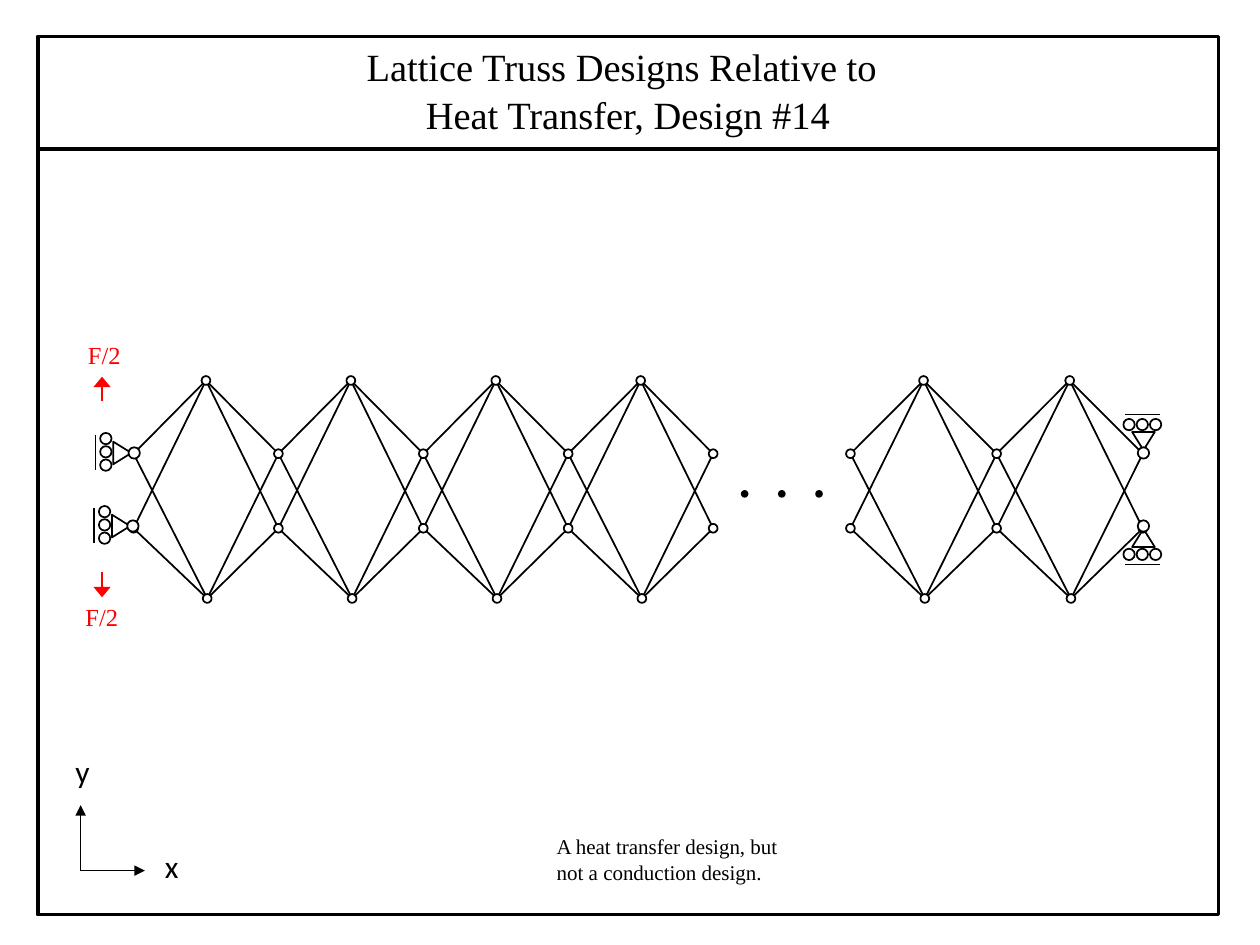
import pptx
import pptx.dml.color
import pptx.enum.shapes
import pptx.enum.text
import pptx.oxml
import pptx.oxml.ns
import pptx.util

WIDTH, HEIGHT = 10, 7.5
BLACK, WHITE, RED = "000000", "FFFFFF", "FF0000"
SERIF, SANS = "Times New Roman", "Calibri"
SHAPE = pptx.enum.shapes.MSO_SHAPE
inch = pptx.util.Inches


def colour(value):
    return pptx.dml.color.RGBColor.from_string(value)


def add_line(slide, start, end, weight=1, ink=BLACK, head=None):
    line = slide.shapes.add_connector(
        pptx.enum.shapes.MSO_CONNECTOR.STRAIGHT, *map(inch, (*start, *end)))
    line.line.color.rgb = colour(ink)
    line.line.width = pptx.util.Pt(weight)
    properties = line._element.spPr
    if head:
        tail = pptx.oxml.parse_xml(
            f'<a:tailEnd {pptx.oxml.ns.nsdecls("a")} type="triangle" w="{head}" len="med"/>')
        line.line._get_or_add_ln().append(tail)
    properties.append(pptx.oxml.parse_xml(f'<a:effectLst {pptx.oxml.ns.nsdecls("a")}/>'))


def add_outline(slide, kind, box, fill=None, weight=1, turn=0):
    outline = slide.shapes.add_shape(kind, *map(inch, box))
    outline.shadow.inherit = False
    outline.rotation = turn
    if fill:
        outline.fill.solid()
        outline.fill.fore_color.rgb = colour(fill)
    else:
        outline.fill.background()
    outline.line.color.rgb = colour(BLACK)
    outline.line.width = pptx.util.Pt(weight)


def add_circle(slide, centre, size, fill=WHITE, weight=1):
    x, y = centre
    add_outline(slide, SHAPE.OVAL, (x - size / 2, y - size / 2, size, size), fill, weight)


def write(paragraph, words, size, font, ink=BLACK):
    run = paragraph.add_run()
    run.text = words
    run.font.size = pptx.util.Pt(size)
    run.font.name = font
    run.font.color.rgb = colour(ink)


def add_label(slide, box, words, size, font=SERIF, ink=BLACK):
    frame = slide.shapes.add_textbox(*map(inch, box)).text_frame
    frame.word_wrap = True
    write(frame.paragraphs[0], words, size, font, ink)


def draw_heading(slide, box, lines):
    heading = slide.shapes.title
    heading.left, heading.top, heading.width, heading.height = map(inch, box)
    frame = heading.text_frame
    frame.auto_size = pptx.enum.text.MSO_AUTO_SIZE.NONE
    frame.vertical_anchor = pptx.enum.text.MSO_ANCHOR.TOP
    frame.margin_top = inch(0.11)
    for index, (words, indent) in enumerate(lines):
        paragraph = frame.add_paragraph() if index else frame.paragraphs[0]
        paragraph.alignment = pptx.enum.text.PP_ALIGN.LEFT
        paragraph.line_spacing = pptx.util.Pt(27.4)
        paragraph._p.get_or_add_pPr().set("marL", str(inch(indent)))
        write(paragraph, words, 22, SERIF)


def draw_frame(slide, box):
    left, top, width, height = box
    add_outline(slide, SHAPE.RECTANGLE, box, weight=2)
    divider = top + 0.128 * height
    add_line(slide, (left, divider), (left + width, divider), 2)


def draw_truss(slide, box, cells):
    left, top, width, height = box
    pitch = width / cells
    upper, lower, bottom = (top + share * height for share in (0.336, 0.678, 1))
    sides = [(left + pitch * i, y) for i in range(cells + 1) for y in (upper, lower)]
    peaks = [(left + pitch * (i + 0.5), top) for i in range(cells)]
    feet = [(x + 0.01, bottom) for x, _ in peaks]
    for cell in range(cells):
        for apex in (peaks[cell], feet[cell]):
            for joint in sides[2 * cell:2 * cell + 4]:
                add_line(slide, joint, apex)
    for node in sides + peaks + feet:
        add_circle(slide, node, 0.07)


def draw_support(slide, box, outward, turn):
    left, top, unit, _ = box
    pin = left + unit / 2, top + unit / 2
    dx, dy = outward

    def place(out, across=0):
        return (pin[0] + unit * (out * dx + across * abs(dy)),
                pin[1] + unit * (out * dy + across * abs(dx)))

    x, y = place(1.05)
    base, rise = 2 * unit, 1.6 * unit
    add_outline(slide, SHAPE.ISOSCELES_TRIANGLE,
                (x - base / 2, y - rise / 2, base, rise), turn=turn)
    for across in (-1.17, 0, 1.17):
        add_circle(slide, place(2.5, across - 0.1), unit)
    add_line(slide, place(3.4, -1.6), place(3.4, 1.5))
    add_circle(slide, pin, unit)


def draw_gap(slide, box, dots):
    left, top, width, height = box
    for i in range(dots):
        add_circle(slide, (left + width * i / (dots - 1), top + height / 2), 0.05, BLACK, 0.75)


def draw_forces(slide, box):
    left, top, width, height = box
    middle, bottom = left + width / 2, top + height
    add_label(slide, (left + 0.02, top, width, 0.34), "F/2", 14, ink=RED)
    add_line(slide, (middle, top + 0.53), (middle, top + 0.34), ink=RED, head="lg")
    add_line(slide, (middle, bottom - 0.53), (middle, bottom - 0.33), ink=RED, head="lg")
    add_label(slide, (left, bottom - 0.34, width, 0.34), "F/2", 14, ink=RED)


def draw_axes(slide, box):
    left, top, width, height = box
    origin = left, top + height
    add_line(slide, origin, (left + width, top + height), 0.5, head="med")
    add_line(slide, origin, (left, top), 0.5, head="med")
    add_label(slide, (left + width + 0.06, top + height - 0.24, 0.31, 0.4), "x", 18, SANS)
    add_label(slide, (left - 0.14, top - 0.47, 0.31, 0.4), "y", 18, SANS)


def main():
    deck = pptx.Presentation()
    deck.slide_width, deck.slide_height = inch(WIDTH), inch(HEIGHT)
    slide = deck.slides.add_slide(deck.slide_layouts[5])
    draw_frame(slide, (0.3, 0.29, 9.37, 6.97))
    draw_heading(slide, (2.53, 0.22, 4.97, 0.94),
                 [("Lattice Truss Designs Relative to", 0.28),
                  ("Heat Transfer, Design #14", 0.75)])
    draw_truss(slide, (1.06, 3.02, 4.6, 1.73), 4)
    draw_truss(slide, (6.75, 3.02, 2.32, 1.73), 2)
    for left, top, outward, turn in (
            (1.02, 3.55, (-1, 0), 90), (1.01, 4.13, (-1, 0), 90),
            (9.03, 3.55, (0, -1), 180), (9.03, 4.13, (0, 1), 0)):
        draw_support(slide, (left, top, 0.09, 0.09), outward, turn)
    draw_gap(slide, (5.91, 3.89, 0.59, 0.06), 3)
    draw_forces(slide, (0.58, 2.65, 0.46, 2.42))
    draw_axes(slide, (0.64, 6.39, 0.51, 0.52))
    add_label(slide, (4.32, 6.57, 2.09, 0.5),
              "A heat transfer design, but not a conduction design.", 12)
    deck.save("out.pptx")


if __name__ == "__main__":
    main()
